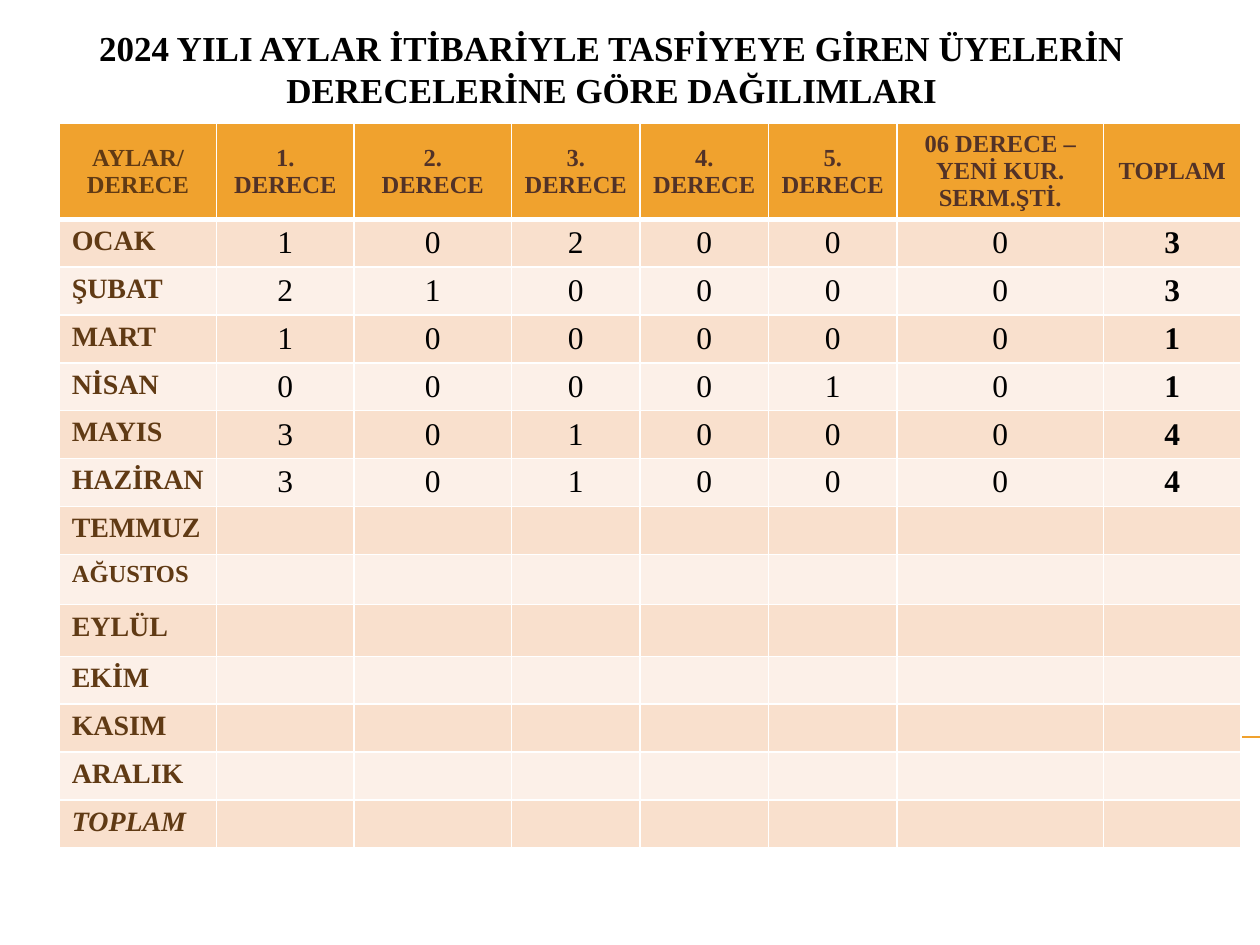
from lxml.etree import SubElement
from pptx import Presentation
from pptx.dml.color import RGBColor
from pptx.enum.shapes import MSO_CONNECTOR
from pptx.enum.text import MSO_ANCHOR, MSO_AUTO_SIZE, PP_ALIGN
from pptx.oxml.ns import qn
from pptx.util import Inches, Pt

FONT = "Times New Roman"
COLORS = {
    "black": "000000", "white": "FFFFFF", "orange": "F0A22E",
    "brown": "603A14", "dark": "523227", "band1": "F9E0CD", "band2": "FCF0E8",
}
TITLE = "2024 YILI AYLAR İTİBARİYLE TASFİYEYE GİREN ÜYELERİN DERECELERİNE GÖRE DAĞILIMLARI"
HEADERS = ["AYLAR/ DERECE", "1.\nDERECE", "2.\nDERECE", "3. DERECE", "4. DERECE",
           "5. DERECE", "06 DERECE – YENİ KUR. SERM.ŞTİ.", "TOPLAM"]
ROWS = [
    ("OCAK", [1, 0, 2, 0, 0, 0, 3]),
    ("ŞUBAT", [2, 1, 0, 0, 0, 0, 3]),
    ("MART", [1, 0, 0, 0, 0, 0, 1]),
    ("NİSAN", [0, 0, 0, 0, 1, 0, 1]),
    ("MAYIS", [3, 0, 1, 0, 0, 0, 4]),
    ("HAZİRAN", [3, 0, 1, 0, 0, 0, 4]),
    ("TEMMUZ", []), ("AĞUSTOS", []), ("EYLÜL", []), ("EKİM", []),
    ("KASIM", []), ("ARALIK", []), ("TOPLAM", []),
]
COL_WIDTHS = [1.25, 1.09, 1.25, 1.02, 1.02, 1.02, 1.64, 1.09]
HEADER_HEIGHT, ROW_HEIGHT = 0.76, 0.38
TALL_ROWS = {"AĞUSTOS": 0.4, "EYLÜL": 0.41}


def rgb(name):
    return RGBColor.from_string(COLORS[name])


def add_run(p, text, size, color, bold=True, italic=False):
    r = p.add_run()
    r.text = text
    r.font.name = FONT
    r.font.size = Pt(size)
    r.font.bold = bold
    r.font.italic = italic
    r.font.color.rgb = rgb(color)


def add_rule(s):
    line = s.shapes.add_connector(MSO_CONNECTOR.STRAIGHT, Inches(0.56), Inches(5.85),
                                  Inches(10), Inches(5.85))
    line.line.color.rgb = rgb("orange")
    line.line.width = Pt(0.75)
    SubElement(line._element.spPr, qn("a:effectLst"))


def add_title(s):
    title = s.shapes.title
    title.left, title.top = Inches(0.23), Inches(0.16)
    title.width, title.height = Inches(9.25), Inches(0.63)
    tf = title.text_frame
    tf.word_wrap = True
    tf.auto_size = MSO_AUTO_SIZE.NONE
    tf.vertical_anchor = MSO_ANCHOR.TOP
    p = tf.paragraphs[0]
    p.alignment = PP_ALIGN.CENTER
    add_run(p, TITLE, 20, "black")


def set_borders(cell, bottom):
    """Draw white borders; they come before the fill in the cell properties."""
    tc_pr = cell._tc.get_or_add_tcPr()
    for side, width in (("L", 1), ("R", 1), ("T", 1), ("B", bottom)):
        ln = SubElement(tc_pr, qn(f"a:ln{side}"), w=str(Pt(width)))
        fill = SubElement(ln, qn("a:solidFill"))
        SubElement(fill, qn("a:srgbClr"), val=COLORS["white"])


def fill_cell(cell, text, fill, size, color, align=PP_ALIGN.CENTER,
              bold=True, italic=False, border=1):
    set_borders(cell, border)
    cell.fill.solid()
    cell.fill.fore_color.rgb = rgb(fill)
    tf = cell.text_frame
    for i, part in enumerate(text.split("\n")):
        p = tf.add_paragraph() if i else tf.paragraphs[0]
        p.alignment = align
        if part:
            add_run(p, part, size, color, bold, italic)
        else:
            end = SubElement(p._p, qn("a:endParaRPr"), sz=str(size * 100))
            SubElement(end, qn("a:latin"), typeface=FONT)


def add_month_table(s):
    heights = [HEADER_HEIGHT] + [TALL_ROWS.get(m, ROW_HEIGHT) for m, _ in ROWS]
    table = s.shapes.add_table(len(heights), len(COL_WIDTHS), Inches(0.47), Inches(0.98),
                               Inches(sum(COL_WIDTHS)), Inches(sum(heights))).table
    for column, width in zip(table.columns, COL_WIDTHS):
        column.width = Inches(width)
    for row, height in zip(table.rows, heights):
        row.height = Inches(height)

    for c, header in enumerate(HEADERS):
        cell = table.cell(0, c)
        fill_cell(cell, header, "orange", 14, "dark" if c else "brown", border=3)
        cell.vertical_anchor = MSO_ANCHOR.MIDDLE

    last = len(HEADERS) - 1
    for i, (month, counts) in enumerate(ROWS, start=1):
        band = "band1" if i % 2 else "band2"
        fill_cell(table.cell(i, 0), month, band, 14 if month == "AĞUSTOS" else 16, "brown",
                  PP_ALIGN.LEFT, italic=month == "TOPLAM")
        for c in range(1, last + 1):
            text = str(counts[c - 1]) if counts else ""
            fill_cell(table.cell(i, c), text, band, 18, "black", bold=c == last)


def main():
    prs = Presentation()
    prs.slide_width, prs.slide_height = Inches(10), Inches(7.5)
    s = prs.slides.add_slide(prs.slide_layouts[5])
    add_rule(s)
    add_title(s)
    add_month_table(s)
    prs.save("out.pptx")


if __name__ == "__main__":
    main()
